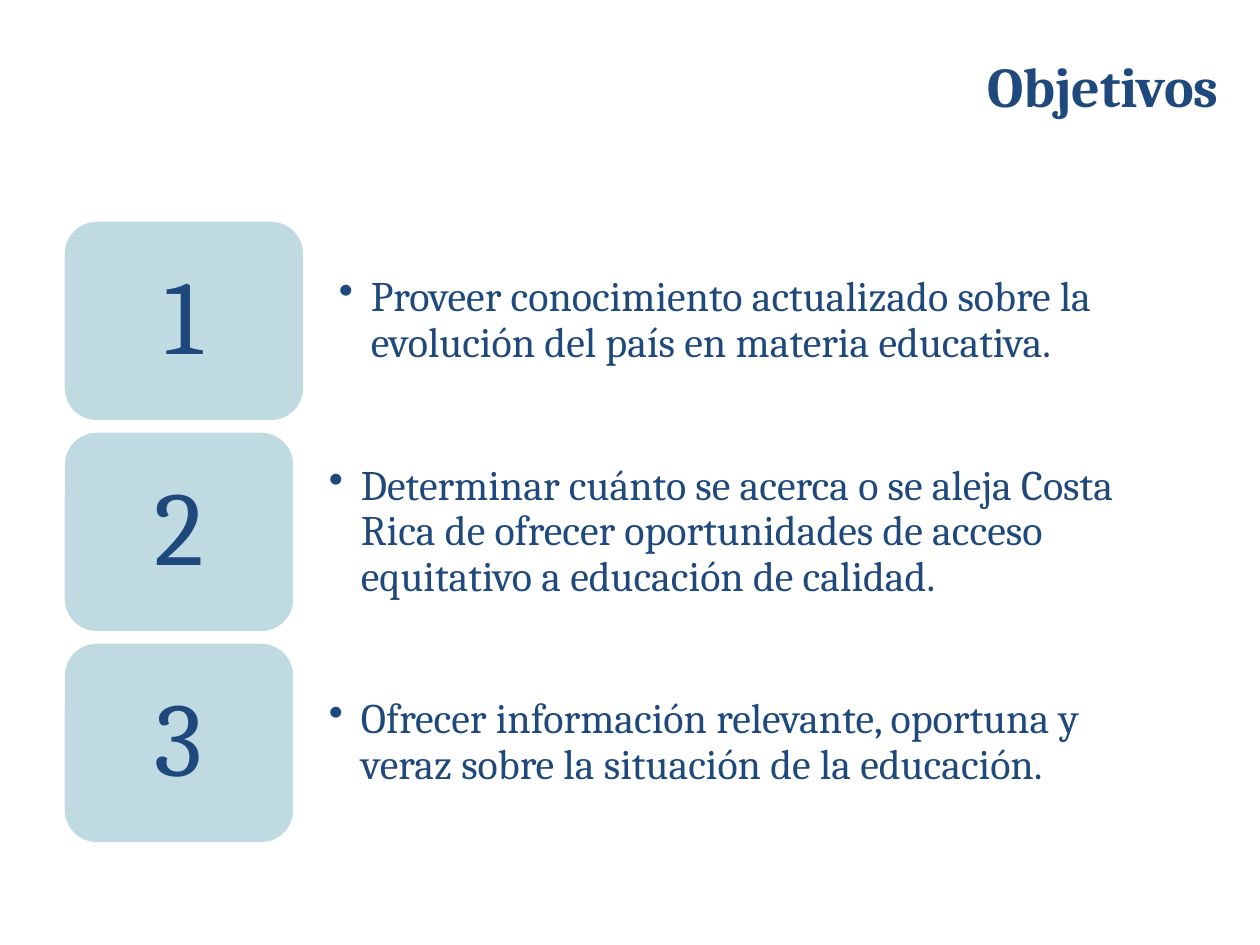
"""Build the slide with the three numbered objectives."""
from dataclasses import dataclass

from pptx import Presentation
from pptx.dml.color import RGBColor
from pptx.enum.shapes import MSO_SHAPE as Shape
from pptx.enum.text import MSO_ANCHOR as Anchor, MSO_AUTO_SIZE as AutoSize, PP_ALIGN as Align
from pptx.oxml.ns import qn
from pptx.util import Inches, Pt

PX = Inches(1) / 126


def emu(px):
    return round(px * PX)


@dataclass(frozen=True)
class Theme:
    font: str = "Cambria"
    ink: str = "1F497D"
    tile: str = "31859C"
    tile_opacity: int = 30
    edge: str = "FFFFFF"
    edge_width: int = 2
    title_size: int = 32
    number_size: int = 60
    body_size: int = 24


def write(box, text, *, theme, size, bold=False, align=Align.LEFT, anchor=Anchor.MIDDLE,
          insets=(13, 6), spacing=None, bullet_indent=0):
    frame = box.text_frame
    frame.word_wrap = True
    frame.auto_size = AutoSize.NONE
    frame.vertical_anchor = anchor
    frame.margin_left = frame.margin_right = emu(insets[0])
    frame.margin_top = frame.margin_bottom = emu(insets[1])
    para = frame.paragraphs[0]
    if bullet_indent:
        para.level = 1
        props = para._p.get_or_add_pPr()
        props.set("marL", str(emu(bullet_indent)))
        props.set("indent", str(-emu(bullet_indent)))
        props.append(props.makeelement(qn("a:buChar"), {"char": "•"}))
    para.alignment = align
    if spacing:
        para.line_spacing = spacing
    span = para.add_run()
    span.text = text
    span.font.name = theme.font
    span.font.size = Pt(size)
    span.font.bold = bold
    span.font.color.rgb = RGBColor.from_string(theme.ink)


class Page:
    """Adds styled elements to one slide."""

    def __init__(self, deck, theme):
        self.theme = theme
        self.slide = deck.slides.add_slide(deck.slide_layouts[5])

    def title(self, text, left, top, width, height):
        box = self.slide.shapes.title
        box.left, box.top, box.width, box.height = map(emu, (left, top, width, height))
        write(box, text, theme=self.theme, size=self.theme.title_size, bold=True,
              align=Align.RIGHT, anchor=Anchor.TOP)

    def tile(self, text, *place):
        theme = self.theme
        box = self.slide.shapes.add_shape(Shape.ROUNDED_RECTANGLE, *map(emu, place))
        box.shadow.inherit = False
        box.fill.solid()
        box.fill.fore_color.rgb = RGBColor.from_string(theme.tile)
        color = box.fill._xPr.find(qn("a:solidFill"))[0]
        color.append(color.makeelement(qn("a:alpha"), {"val": str(theme.tile_opacity * 1000)}))
        box.line.color.rgb = RGBColor.from_string(theme.edge)
        box.line.width = Pt(theme.edge_width)
        write(box, text, theme=theme, size=theme.number_size, align=Align.CENTER,
              insets=(32, 15), spacing=0.9)

    def objective(self, text, *place):
        box = self.slide.shapes.add_textbox(*map(emu, place))
        write(box, text, theme=self.theme, size=self.theme.body_size, insets=(34, 17),
              spacing=0.9, bullet_indent=32)


OBJECTIVES = [
    (242, "Proveer conocimiento actualizado sobre la evolución del país en materia educativa."),
    (232, "Determinar cuánto se acerca o se aleja Costa Rica de ofrecer oportunidades "
          "de acceso equitativo a educación de calidad."),
    (232, "Ofrecer información relevante, oportuna y veraz sobre la situación de la educación."),
]
LEFT, TOP, RIGHT = 63, 220, 1189
TILE_HEIGHT, PITCH, INSET = 202, 211, 16


def main():
    deck = Presentation()
    deck.slide_width, deck.slide_height = Inches(10), Inches(7.5)
    page = Page(deck, Theme())
    page.title("Objetivos", 600, 45, 632, 81)
    for index, (width, text) in enumerate(OBJECTIVES):
        top, split = TOP + index * PITCH, LEFT + width
        page.objective(text, split, top + INSET, RIGHT - split, TILE_HEIGHT - 2 * INSET)
        page.tile(str(index + 1), LEFT, top, width, TILE_HEIGHT)
    deck.save("out.pptx")


if __name__ == "__main__":
    main()
